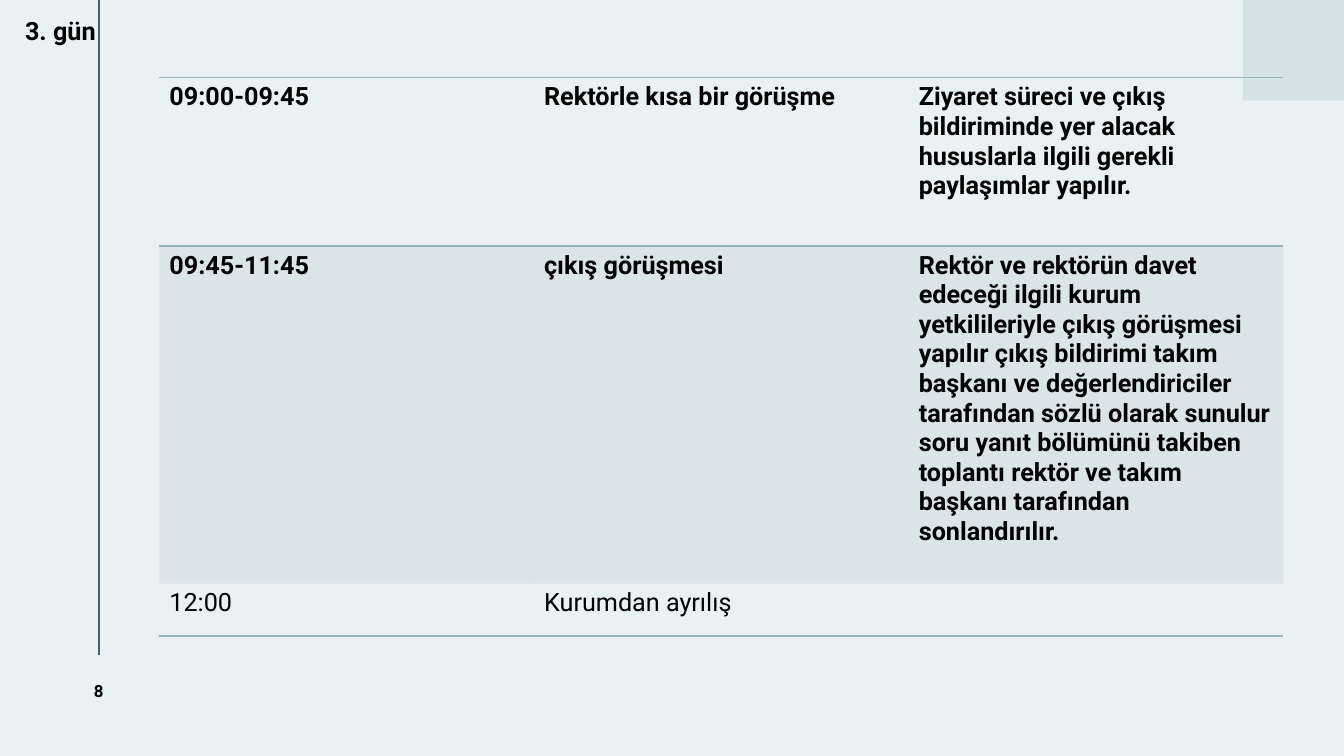
"""Build the day three visit schedule slide."""
from pptx import Presentation, util as u
from pptx.dml.color import RGBColor
from pptx.enum import shapes, text
from pptx.oxml.ns import qn
from lxml import etree

ROWS = [
    ("09:00-09:45", "Rektörle kısa bir görüşme",
     "Ziyaret süreci ve çıkış bildiriminde yer alacak hususlarla ilgili "
     "gerekli paylaşımlar yapılır."),
    ("09:45-11:45", "çıkış görüşmesi",
     "Rektör ve rektörün davet edeceği ilgili kurum yetkilileriyle çıkış "
     "görüşmesi yapılır çıkış bildirimi takım başkanı ve değerlendiriciler "
     "tarafından sözlü olarak sunulur soru yanıt bölümünü takiben toplantı "
     "rektör ve takım başkanı tarafından sonlandırılır."),
    ("12:00", "Kurumdan ayrılış", ""),
]
HIGH = (1.67, 3.35, 0.52)
RULED = (0, 1, 3)
BAND = 1
LAST = len(ROWS) - 1
WIDE = 11.15
TINT = "95B8BF"


def color(code):
    """Turn a hex string into a colour."""
    return RGBColor.from_string(code)


def box(*sizes):
    """Turn inches into lengths."""
    return [u.Inches(size) for size in sizes]


def style(para, size, bold=True):
    """Set the font of a paragraph."""
    font = para.font
    font.name, font.size, font.bold = "Roboto", u.Pt(size), bold
    font.color.rgb = color("000000")


def node(parent, tag, **attrs):
    """Append a drawing element."""
    return etree.SubElement(parent, qn("a:" + tag), attrs)


def edge(cell, side, shown):
    """Draw or clear one border of a cell."""
    line = node(cell._tc.get_or_add_tcPr(), "ln" + side, w="12700")
    if shown:
        node(node(line, "solidFill"), "srgbClr", val=TINT)
    else:
        node(line, "noFill")


def label(slide, words, place, size):
    """Add a text box of one line."""
    frame = slide.shapes.add_textbox(*box(*place)).text_frame
    frame.word_wrap = True
    para = frame.paragraphs[0]
    para.text = words
    style(para, size)
    return frame


def decor(slide):
    """Add the background, the side line and the corner square."""
    slide.background.fill.solid()
    slide.background.fill.fore_color.rgb = color("EAF1F2")
    line = slide.shapes.add_connector(
        shapes.MSO_CONNECTOR.STRAIGHT, *box(0.98, 0, 0.98, 6.5))
    line.line.color.rgb = color("40636A")
    line.line.width = u.Pt(1.5)
    node(line._element.spPr, "effectLst")
    square = slide.shapes.add_shape(
        shapes.MSO_SHAPE.RECTANGLE, *box(12.33, 0, 1, 1))
    square.shadow.inherit = False
    square.fill.solid()
    square.fill.fore_color.rgb = color("D5E3E5")
    square.line.fill.background()


def plan(slide):
    """Add the schedule table."""
    count = len(ROWS[0])
    grid = slide.shapes.add_table(
        len(ROWS), count, *box(1.58, 0.77, WIDE, sum(HIGH))).table
    grid.first_row = grid.horz_banding = False
    for col in grid.columns:
        col.width = u.Inches(WIDE / count)
    for i, row in enumerate(ROWS):
        grid.rows[i].height = u.Inches(HIGH[i])
        for j, words in enumerate(row):
            cell = grid.cell(i, j)
            cell.text = words
            style(cell.text_frame.paragraphs[0], 18, i != LAST)
            for side, shown in (("L", False), ("R", False),
                                ("T", i in RULED), ("B", i + 1 in RULED)):
                edge(cell, side, shown)
            if i == BAND:
                cell.fill.solid()
                cell.fill.fore_color.rgb = color(TINT)
                tone = cell._tc.tcPr.find(qn("a:solidFill"))[0]
                node(tone, "alpha", val="20000")
            else:
                cell.fill.background()


def main():
    """Build and save the slide."""
    deck = Presentation()
    deck.slide_width, deck.slide_height = box(13.33, 7.5)
    slide = deck.slides.add_slide(deck.slide_layouts[6])
    decor(slide)
    plan(slide)
    page = label(slide, "8", (0.45, 6.5, 1.06, 0.71), 12)
    page.vertical_anchor = text.MSO_ANCHOR.MIDDLE
    page.paragraphs[0].alignment = text.PP_ALIGN.CENTER
    label(slide, "3. gün", (0.15, 0.1, 5.17, 0.4), 18)
    deck.save("out.pptx")


if __name__ == "__main__":
    main()
